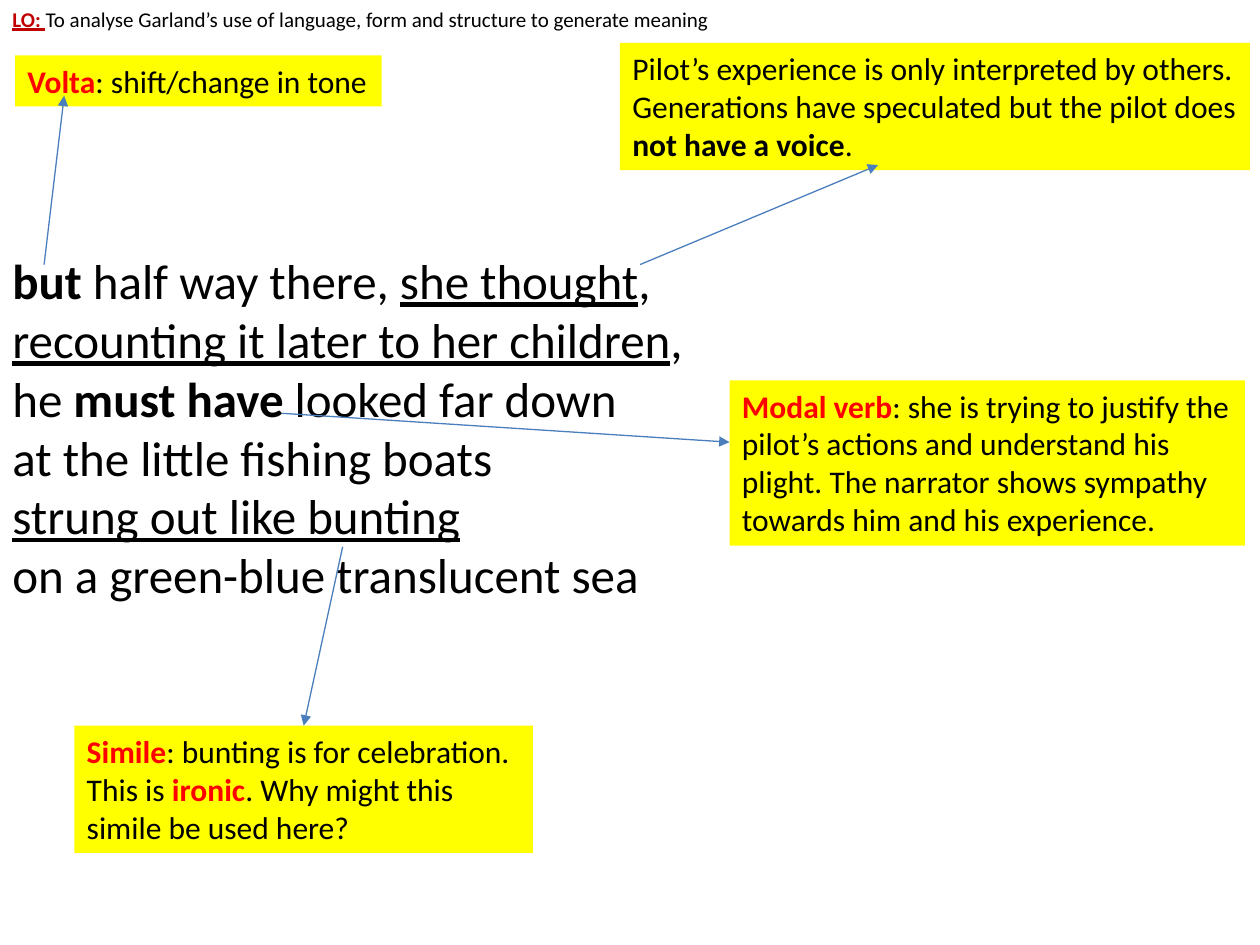
from lxml import etree
from pptx import Presentation
from pptx.dml.color import RGBColor
from pptx.enum.shapes import MSO_CONNECTOR, MSO_SHAPE
from pptx.enum.text import MSO_ANCHOR, MSO_AUTO_SIZE, PP_ALIGN
from pptx.oxml.ns import qn
from pptx.util import Pt

RECT = MSO_SHAPE.RECTANGLE
STRAIGHT = MSO_CONNECTOR.STRAIGHT
LEFT, TOP = PP_ALIGN.LEFT, MSO_ANCHOR.TOP
GROW = MSO_AUTO_SIZE.SHAPE_TO_FIT_TEXT

FONT = "Calibri"
BLACK, WHITE, YELLOW = "000000", "FFFFFF", "FFFF00"
RED, DARK_RED, BLUE = "FF0000", "C00000", "4B7EBC"
KEY = dict(bold=True, color=RED)
BOLD = dict(bold=True)
UNDERLINE = dict(underline=True)


def rgb(color):
    return RGBColor.from_string(color)


def add_text(p, text, size=18, color=BLACK, bold=False, underline=False):
    """Add text to a paragraph, turning each newline into a line break."""
    for i, line in enumerate(text.split("\n")):
        if i:
            p.add_line_break()
        if line:
            r = p.add_run()
            r.text = line
            r.font.name, r.font.size = FONT, Pt(size)
            r.font.bold, r.font.underline = bold, underline
            r.font.color.rgb = rgb(color)


def add_box(s, box, fill, parts, size=18, alpha=None):
    """Add a filled text box; parts are (text, format) pairs."""
    sp = s.shapes.add_shape(RECT, *map(Pt, box))
    sp.shadow.inherit = False
    sp.fill.solid()
    sp.fill.fore_color.rgb = rgb(fill)
    sp.line.fill.background()
    if alpha:
        color = sp.fill._xPr.find(qn("a:solidFill"))[0]
        etree.SubElement(color, qn("a:alpha"), val=str(alpha * 1000))
    tf = sp.text_frame
    tf.word_wrap, tf.auto_size, tf.vertical_anchor = True, GROW, TOP
    p = tf.paragraphs[0]
    p.alignment = LEFT
    for text, style in parts:
        add_text(p, text, **{"size": size, **style})
    return sp


def add_objective(s, box):
    sp = add_box(s, box, WHITE, [
        ("LO: ", dict(color=DARK_RED, bold=True, underline=True)),
        ("To analyse Garland’s use of language, form and structure "
         "to generate meaning", {}),
    ], size=12, alpha=88)
    pPr = sp.text_frame.paragraphs[0]._p.get_or_add_pPr()
    pPr.set("marL", str(Pt(22.5)))
    pPr.set("indent", str(-Pt(22.5)))


def add_stanza(s, box):
    add_box(s, box, WHITE, [
        ("but ", BOLD),
        ("half way there, ", {}),
        ("she thought", UNDERLINE),
        (",\n", {}),
        ("recounting it later to her children", UNDERLINE),
        (",\nhe ", {}),
        ("must have ", BOLD),
        ("looked far down\nat the little fishing boats\n", {}),
        ("strung out like bunting\n", UNDERLINE),
        ("on a green-blue translucent sea", {}),
    ], size=28, alpha=88)


def add_note(s, box, parts, start, end, target_site=None):
    """Add a yellow note and the arrow that leads to it from the stanza."""
    sp = add_box(s, box, YELLOW, parts)
    arrow = s.shapes.add_connector(STRAIGHT, *map(Pt, start + end))
    if target_site is not None:
        arrow.end_connect(sp, target_site)
    arrow.line.color.rgb = rgb(BLUE)
    arrow.line.width = Pt(0.75)
    etree.SubElement(arrow.line._get_or_add_ln(), qn("a:tailEnd"), type="triangle")
    etree.SubElement(arrow._element.spPr, qn("a:effectLst"))


def main():
    prs = Presentation()
    prs.slide_width, prs.slide_height = Pt(720), Pt(540)
    s = prs.slides.add_slide(prs.slide_layouts[6])

    add_objective(s, (0, 0, 720, 21.8))
    add_stanza(s, (0, 139.7, 720, 211))
    add_note(s, (354.3, 24.5, 360, 72.7), [
        ("Pilot’s experience is only interpreted by others. Generations have "
         "speculated but the pilot does ", {}),
        ("not have a voice", BOLD),
        (".", {}),
    ], (365.8, 151.2), (501.8, 94.3))
    add_note(s, (8.6, 31.7, 209.5, 29.1), [
        ("Volta", KEY),
        (": shift/change in tone", {}),
    ], (25.2, 151.2), (36.7, 54.7))
    add_note(s, (416.9, 217.4, 294.5, 94.5), [
        ("Modal verb", KEY),
        (": she is trying to justify the pilot’s actions and understand his "
         "plight. The narrator shows sympathy towards him and his experience.", {}),
    ], (161.3, 236.2), (416.9, 252.7))
    add_note(s, (42.5, 414.7, 262.1, 72.7), [
        ("Simile", KEY),
        (": bunting is for celebration. This is ", {}),
        ("ironic", KEY),
        (". Why might this simile be used here?", {}),
    ], (195.8, 312.5), (173.5, 414.7), target_site=0)

    prs.save("out.pptx")


if __name__ == "__main__":
    main()
